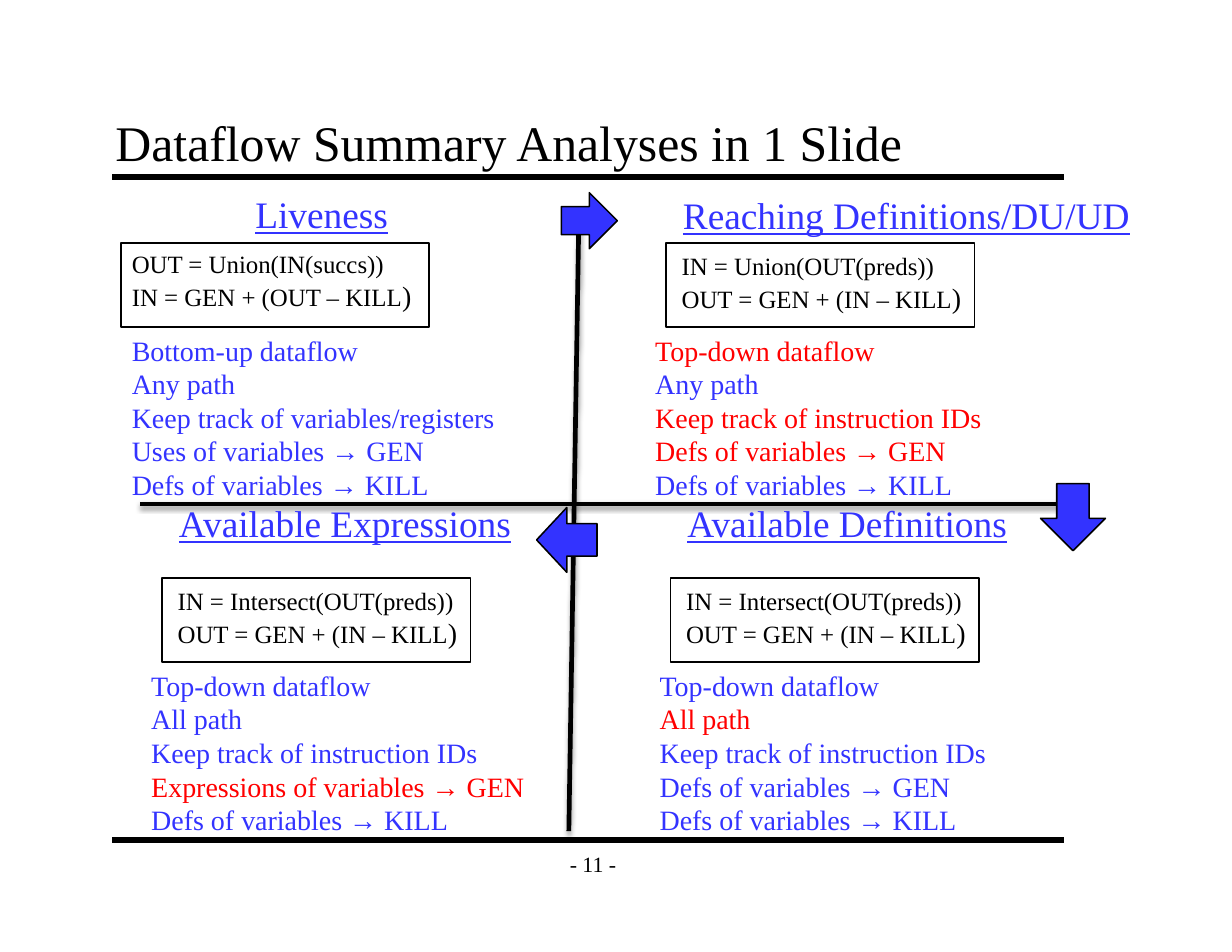
from pptx import Presentation
from pptx.dml.color import RGBColor
from pptx.enum.shapes import MSO_CONNECTOR, MSO_SHAPE
from pptx.enum.text import MSO_ANCHOR, PP_ALIGN
from pptx.oxml import parse_xml
from pptx.oxml.ns import nsdecls
from pptx.util import Cm, Pt

LINE = MSO_CONNECTOR.STRAIGHT
RECT = MSO_SHAPE.RECTANGLE
RIGHT, DOWN, LEFT = MSO_SHAPE.RIGHT_ARROW, MSO_SHAPE.DOWN_ARROW, MSO_SHAPE.LEFT_ARROW
LOW, MID = MSO_ANCHOR.BOTTOM, MSO_ANCHOR.MIDDLE
CENTER = PP_ALIGN.CENTER

THEME = {
    "font": "Times New Roman",
    "ink": RGBColor(0, 0, 0),
    "same": RGBColor(0x33, 0x33, 0xFF),
    "new": RGBColor(0xFF, 0, 0),
    "title": 32, "head": 24, "fact": 18, "rule": 16, "page": 14,
}

TITLE = "Dataflow Summary Analyses in 1 Slide"
PAGE = "- 11 -"
GEN, KILL = "Defs of variables → GEN", "Defs of variables → KILL"
IDS = "Keep track of instruction IDs"
BACK = "OUT = GEN + (IN – KILL"

# Facts in "new" (by index) differ from the analysis before.
# Place: x, y of the frame, y of the heading; shift: x of heading, rules, facts.
PARTS = [
    {"head": "Liveness", "wide": (3.56, 8.84),
     "rules": ("OUT = Union(IN(succs))", "IN = GEN + (OUT – KILL"),
     "facts": ("Bottom-up dataflow", "Any path", "Keep track of variables/registers",
               "Uses of variables → GEN", KILL),
     "new": (), "place": (2.74, 5.51, 4.22), "shift": (2.8, 0, 0), "drop": 0},
    {"head": "Reaching Definitions/DU/UD", "wide": (10.74, 8),
     "rules": ("IN = Union(OUT(preds))", BACK),
     "facts": ("Top-down dataflow", "Any path", IDS, GEN, KILL),
     "new": (0, 2, 3), "place": (15.11, 5.51, 4.24)},
    {"head": "Available Definitions", "wide": (7.82, 8),
     "rules": ("IN = Intersect(OUT(preds))", BACK),
     "facts": ("Top-down dataflow", "All path", IDS, GEN, KILL),
     "new": (1,), "place": (15.21, 13.11, 11.23)},
    {"head": "Available Expressions", "wide": (8.1, 9.04),
     "rules": ("IN = Intersect(OUT(preds))", BACK),
     "facts": ("Top-down dataflow", "All path", IDS, "Expressions of variables → GEN", KILL),
     "new": (3,), "place": (3.68, 13.11, 11.23)},
]
SHIFT, DROP = (0.13, 0.1, -0.5), 0.05

BARS = [(2.54, 4.01, 24.13, 4.01), (2.54, 19.05, 24.13, 19.05)]
CROSS = [(3.18, 11.43, 24.33, 11.43), (13.13, 4.78, 12.9, 18.85)]
ARROWS = [
    (RIGHT, (12.73, 4.37, 1.27, 1.27)),
    (DOWN, (23.6, 10.97, 1.47, 1.52)),
    (LEFT, (12.17, 11.51, 1.37, 1.47)),
]
SHADE = (
    "<a:effectLst %s><a:outerShdw blurRad='39400' dist='22900' dir='5400000' rotWithShape='0'>"
    "<a:srgbClr val='000000'><a:alpha val='35000'/></a:srgbClr>"
    "</a:outerShdw></a:effectLst>" % nsdecls("a"))
PLAIN = "<a:effectLst %s/>" % nsdecls("a")


def spans(box):
    return [Cm(n) for n in box]


def run(par, text, size, tint="ink", line=False):
    part = par.add_run()
    part.text = text
    look = {"name": THEME["font"], "size": Pt(THEME[size]), "underline": line}
    for key, val in look.items():
        setattr(part.font, key, val)
    part.font.color.rgb = THEME[tint]


def write(slide, box, lines, form=None, align=None):
    """Add a text box; each line is a list of argument tuples for run."""
    frame = slide.shapes.add_textbox(*spans(box)).text_frame
    for key, val in {"word_wrap": False, **(form or {})}.items():
        setattr(frame, key, val)
    for i, line in enumerate(lines):
        par = frame.add_paragraph() if i else frame.paragraphs[0]
        par.alignment = align
        for args in line:
            run(par, *args)


def stroke(slide, ends, width, effect):
    bar = slide.shapes.add_connector(LINE, *spans(ends))
    bar.line.color.rgb = THEME["ink"]
    bar.line.width = Pt(width)
    bar._element.spPr.append(parse_xml(effect))


def block(slide, kind, box, tint=None):
    shape = slide.shapes.add_shape(kind, *spans(box))
    shape.shadow.inherit = False
    if tint:
        shape.fill.solid()
        shape.fill.fore_color.rgb = THEME[tint]
    else:
        shape.fill.background()
    shape.line.color.rgb = THEME["ink"]
    shape.line.width = Pt(1)


def draw(slide, part):
    x, y, top = part["place"]
    head, rule, fact = (x + d for d in part.get("shift", SHIFT))
    wide, span = part["wide"]
    first, last = part["rules"]
    block(slide, RECT, (x, y, 6.99, 1.91))
    write(slide, (head, top, wide, 1.3), [[(part["head"], "head", "same", True)]])
    write(slide, (rule, y + part.get("drop", DROP), 6.86, 1.7),
          [[(first, "rule")], [(last, "rule"), (")", "fact")]])
    write(slide, (fact, y + 1.92, span, 4.09),
          [[(text, "fact", "new" if i in part["new"] else "same")]
           for i, text in enumerate(part["facts"])])


def main():
    deck = Presentation()
    deck.slide_width, deck.slide_height = Cm(27.94), Cm(21.59)
    slide = deck.slides.add_slide(deck.slide_layouts[6])
    pad = {"margin_left": Cm(0.28), "margin_right": Cm(0.28),
           "margin_top": Cm(0.15), "margin_bottom": Cm(0.15)}
    for ends in BARS:
        stroke(slide, ends, 4, PLAIN)
    write(slide, (12.5, 19.05, 1.9, 1.07), [[(PAGE, "page")]],
          {**pad, "vertical_anchor": MID}, CENTER)
    write(slide, (2.34, 2.34, 21.59, 1.7), [[(TITLE, "title")]],
          {**pad, "vertical_anchor": LOW, "word_wrap": True})
    for ends in CROSS:
        stroke(slide, ends, 3, SHADE)
    for part in PARTS:
        draw(slide, part)
    for kind, box in ARROWS:
        block(slide, kind, box, "same")
    deck.save("out.pptx")


if __name__ == "__main__":
    main()
